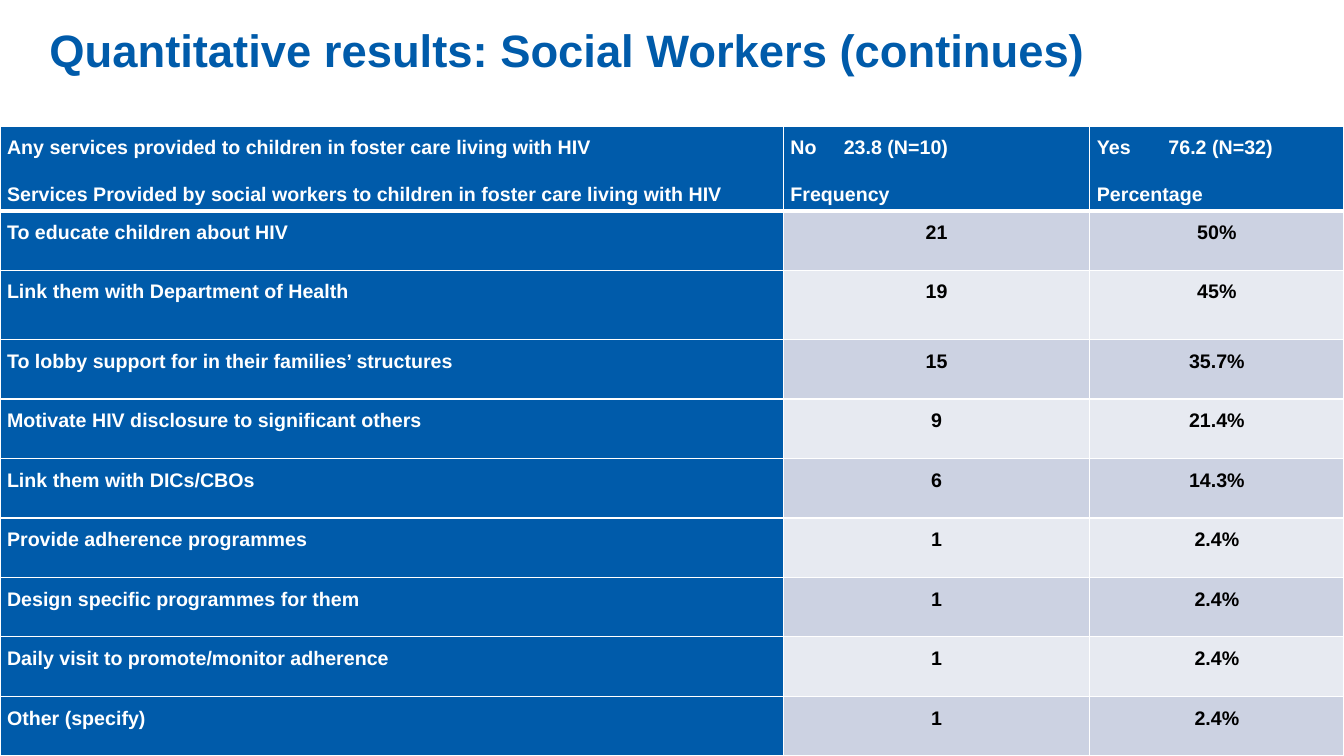
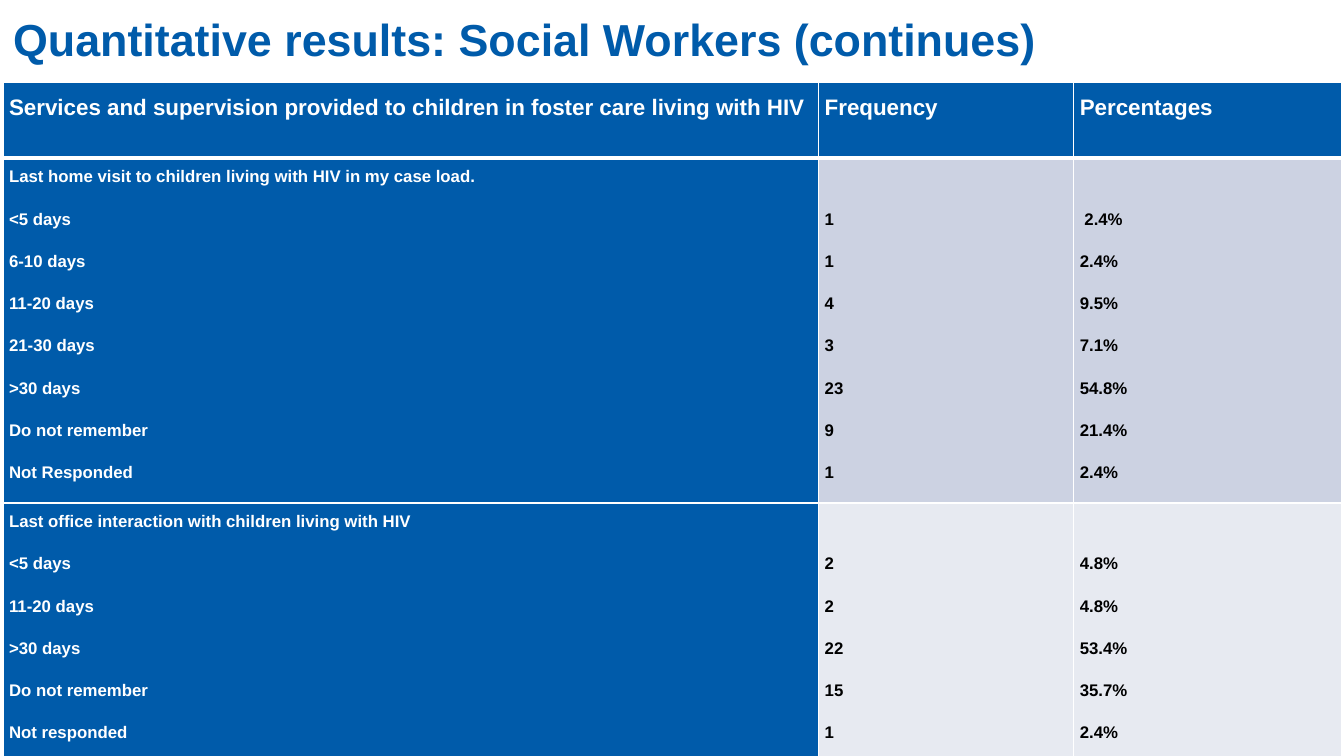
from lxml import etree
from pptx import Presentation
from pptx.dml.color import RGBColor
from pptx.enum.text import MSO_ANCHOR, MSO_AUTO_SIZE, PP_ALIGN
from pptx.oxml.ns import qn
from pptx.util import Inches, Pt

LEFT, CENTER = PP_ALIGN.LEFT, PP_ALIGN.CENTER
TOP = MSO_ANCHOR.TOP
NO_FIT = MSO_AUTO_SIZE.NONE

COLORS = {"blue": "005BAA", "white": "FFFFFF", "black": "000000",
          "dark": "CCD2E2", "light": "E7EAF1"}
FONT = "Arial"
TITLE = "Quantitative results: Social Workers (continues)"


def color(name):
    return RGBColor.from_string(COLORS[name])


def put(frame, text, size=14, ink="black", align=LEFT, lead=1.5, after=10,
        tab=None):
    """Write one paragraph per line of text."""
    for i, line in enumerate(text.split("\n")):
        para = frame.paragraphs[0] if i == 0 else frame.add_paragraph()
        if tab and "\t" in line:
            stops = etree.SubElement(para._p.get_or_add_pPr(), qn("a:tabLst"))
            etree.SubElement(stops, qn("a:tab"), pos=str(Inches(tab)), algn="l")
        para.alignment = align
        para.line_spacing = lead
        para.space_after = Pt(after)
        run = para.add_run()
        run.text = line
        font = run.font
        font.name, font.size, font.bold = FONT, Pt(size), True
        font.color.rgb = color(ink)


def edge(cell, side, width):
    """Draw one white border of a cell."""
    line = etree.SubElement(cell._tc.get_or_add_tcPr(), qn("a:" + side),
                            w=str(Pt(width)))
    fill = etree.SubElement(line, qn("a:solidFill"))
    etree.SubElement(fill, qn("a:srgbClr"), val=COLORS["white"])


class Deck:
    def __init__(self):
        self.prs = Presentation()
        self.prs.slide_width = Inches(13.33)
        self.prs.slide_height = Inches(7.5)
        self.slide = None

    def page(self, left, top, height, size):
        """Start a slide and place its title."""
        self.slide = self.prs.slides.add_slide(self.prs.slide_layouts[5])
        title = self.slide.shapes.title
        title.left, title.top = Inches(left), Inches(top)
        title.width, title.height = Inches(11.5), Inches(height)
        frame = title.text_frame
        frame.auto_size, frame.vertical_anchor = NO_FIT, TOP
        put(frame, TITLE, size=size, ink="blue", lead=0.9, after=0)

    def table(self, left, top, cols, rows, data, pad, head=14, body=14,
              align=LEFT, tabs=None, drop=0):
        """Add a table; drop lowers the figures below the row's heading."""
        frame = self.slide.shapes.add_table(
            len(rows), len(cols), Inches(left), Inches(top),
            Inches(sum(cols)), Inches(sum(rows)))
        grid = frame.table
        grid.horz_banding = False
        for col, width in zip(grid.columns, cols):
            col.width = Inches(width)
        for row, height in zip(grid.rows, rows):
            row.height = Inches(height)

        for r, texts in enumerate(data):
            band = "dark" if r % 2 else "light"
            for c, text in enumerate(texts):
                cell = grid.cell(r, c)
                label = r == 0 or c == 0
                cell.margin_left = cell.margin_right = Inches(pad)
                cell.margin_top = Inches(0 if label else drop)
                cell.margin_bottom = 0
                cell.vertical_anchor = TOP
                for side in ("lnL", "lnR", "lnT", "lnB"):
                    thick = (r, side) in ((0, "lnB"), (1, "lnT"))
                    edge(cell, side, 3 if thick else 1)
                cell.fill.solid()
                cell.fill.fore_color.rgb = color("blue" if label else band)
                put(cell.text_frame, text, size=body if r else head,
                    ink="white" if label else "black",
                    align=LEFT if label else align,
                    tab=tabs[c] if tabs else None)


SERVICES = [
    ("Any services provided to children in foster care living with HIV\n"
     "Services Provided by social workers to children in foster care "
     "living with HIV",
     "No\t23.8 (N=10)\nFrequency", "Yes\t76.2 (N=32)\nPercentage"),
    ("To educate children about HIV", "21", "50%"),
    ("Link them with Department of Health", "19", "45%"),
    ("To lobby support for in their families’ structures", "15", "35.7%"),
    ("Motivate HIV disclosure to significant others", "9", "21.4%"),
    ("Link them with DICs/CBOs", "6", "14.3%"),
    ("Provide adherence programmes", "1", "2.4%"),
    ("Design specific programmes for them", "1", "2.4%"),
    ("Daily visit to promote/monitor adherence", "1", "2.4%"),
    ("Other (specify)", "1", "2.4%"),
]

VISITS = [
    ("Services and supervision provided to children in foster care "
     "living with HIV", "Frequency", "Percentages"),
    ("Last home visit to children living with HIV in my case load.\n"
     "<5 days\n6-10 days\n11-20 days\n21-30 days\n>30 days\n"
     "Do not remember\nNot Responded",
     "1\n1\n4\n3\n23\n9\n1",
     " 2.4%\n2.4%\n9.5%\n7.1%\n54.8%\n21.4%\n2.4%"),
    ("Last office interaction with children living with HIV\n"
     "<5 days\n11-20 days\n>30 days\nDo not remember\nNot responded",
     "2\n2\n22\n15\n1",
     "4.8%\n4.8%\n53.4%\n35.7%\n2.4%"),
]


def main():
    deck = Deck()

    # Services provided
    deck.page(0.39, 0.23, 0.65, 32.4)
    deck.table(0, 1.25, [7.77, 3.04, 2.52],
               [0.84, 0.59, 0.69] + [0.59] * 7, SERVICES, pad=0.07,
               align=CENTER, tabs=[None, 0.53, 0.71])

    # Visits and supervision
    deck.page(0.03, 0.13, 0.85, 32)
    deck.table(0.03, 0.82, [8.09, 2.53, 2.66], [0.75, 3.42, 2.52], VISITS,
               pad=0.06, head=16, body=12, drop=0.42)

    deck.prs.save("out.pptx")


if __name__ == "__main__":
    main()
